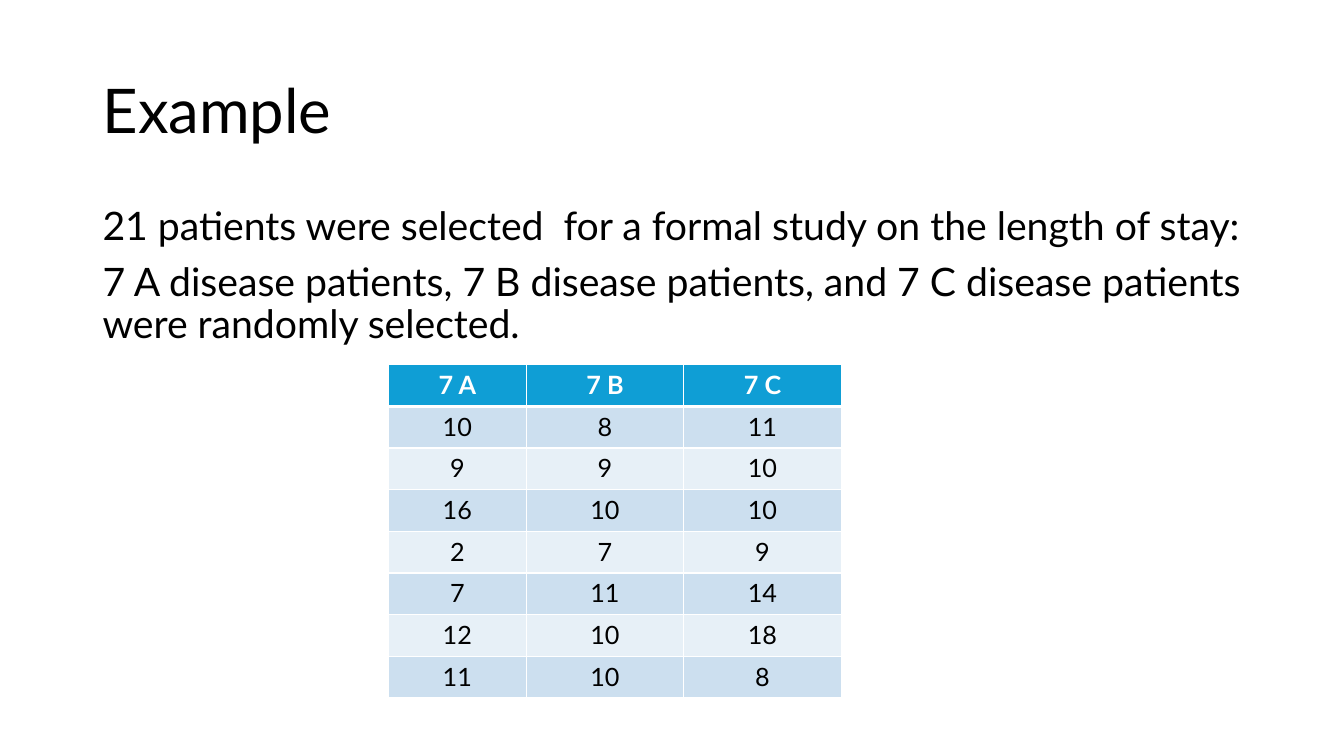
import pptx
import pptx.dml.color
import pptx.enum.text
import pptx.oxml
import pptx.oxml.ns
import pptx.util

COLORS = {"text": "000000", "white": "FFFFFF", "header": "0F9ED5",
          "band_dark": "CCDFEF", "band_light": "E7F0F7"}
ALIGN = pptx.enum.text.PP_ALIGN
ANCHOR = pptx.enum.text.MSO_ANCHOR

STAYS = [
    ["7 A", "7 B", "7 C"],
    [10, 8, 11],
    [9, 9, 10],
    [16, 10, 10],
    [2, 7, 9],
    [7, 11, 14],
    [12, 10, 18],
    [11, 10, 8],
]


def rgb(name):
    return pptx.dml.color.RGBColor.from_string(COLORS[name])


def set_all(obj, values):
    for name, value in values.items():
        setattr(obj, name, value)


class SlideBuilder:
    """Holds the font and the current slide."""

    def __init__(self, prs, font="Lato"):
        self.font = font
        self.slide = prs.slides.add_slide(prs.slide_layouts[1])

    def add_text(self, p, text, size, color="text", bold=False, **layout):
        r = p.add_run()
        r.text = text
        set_all(r.font, {"name": self.font, "size": pptx.util.Pt(size), "bold": bold})
        r.font.color.rgb = rgb(color)
        set_all(p, layout)

    def place(self, sp, left, top, width, height, anchor):
        set_all(sp, {"left": pptx.util.Cm(left), "top": pptx.util.Cm(top),
                     "width": pptx.util.Cm(width), "height": pptx.util.Cm(height)})
        set_all(sp.text_frame, {"word_wrap": True, "vertical_anchor": anchor,
                                "auto_size": pptx.enum.text.MSO_AUTO_SIZE.NONE})
        return sp.text_frame

    def title(self, text, *box):
        tf = self.place(self.slide.shapes.title, *box, ANCHOR.MIDDLE)
        self.add_text(tf.paragraphs[0], text, 44, alignment=ALIGN.LEFT, line_spacing=0.9)

    def body(self, lines, *box):
        """Fills the body placeholder with unbulleted paragraphs."""
        tf = self.place(self.slide.placeholders[1], *box, ANCHOR.TOP)
        for i, line in enumerate(lines):
            p = tf.add_paragraph() if i else tf.paragraphs[0]
            self.add_text(p, line, 28, alignment=ALIGN.LEFT, line_spacing=0.9,
                          space_before=pptx.util.Pt(10))
            pPr = p._p.get_or_add_pPr()
            pPr.set("marL", "0")
            pPr.set("indent", "0")
            pPr.append(pptx.oxml.parse_xml(
                f"<a:buNone {pptx.oxml.ns.nsdecls('a')}/>"))

    def borders(self, cell, **widths):
        """Draws white cell borders; widths in points are keyed by side."""
        tcPr = cell._tc.get_or_add_tcPr()
        for i, (side, width) in enumerate(widths.items()):
            tcPr.insert(i, pptx.oxml.parse_xml(
                f"<a:ln{side} {pptx.oxml.ns.nsdecls('a')} w='{pptx.util.Pt(width)}'>"
                f"<a:solidFill><a:srgbClr val='{COLORS['white']}'/></a:solidFill>"
                f"</a:ln{side}>"))

    def table(self, rows, left, top, col_widths, row_height):
        table = self.slide.shapes.add_table(
            len(rows), len(col_widths), pptx.util.Cm(left), pptx.util.Cm(top),
            pptx.util.Cm(sum(col_widths)), pptx.util.Cm(row_height * len(rows))).table
        for col, width in zip(table.columns, col_widths):
            col.width = pptx.util.Cm(width)
        for i, row in enumerate(rows):
            header = i == 0
            fill = "header" if header else "band_dark" if i % 2 else "band_light"
            for j, value in enumerate(row):
                cell = table.cell(i, j)
                cell.fill.solid()
                cell.fill.fore_color.rgb = rgb(fill)
                self.borders(cell, L=1, R=1, T=3 if i == 1 else 1, B=3 if header else 1)
                self.add_text(cell.text_frame.paragraphs[0], str(value), 18,
                              "white" if header else "text", header,
                              alignment=ALIGN.CENTER)


def main():
    prs = pptx.Presentation()
    set_all(prs, {"slide_width": pptx.util.Cm(33.87),
                  "slide_height": pptx.util.Cm(19.05)})
    s = SlideBuilder(prs)
    s.title("Example", 2.33, 1.01, 29.21, 3.68)
    s.body(["21 patients were selected  for a formal study on the length of stay:",
            "7 A disease patients, 7 B disease patients, and 7 C disease patients "
            "were randomly selected."], 2.33, 5.07, 29.21, 12.09)
    s.table(STAYS, 9.79, 9.19, [3.47, 3.97, 3.97], 1.05)
    prs.save("out.pptx")


if __name__ == "__main__":
    main()
